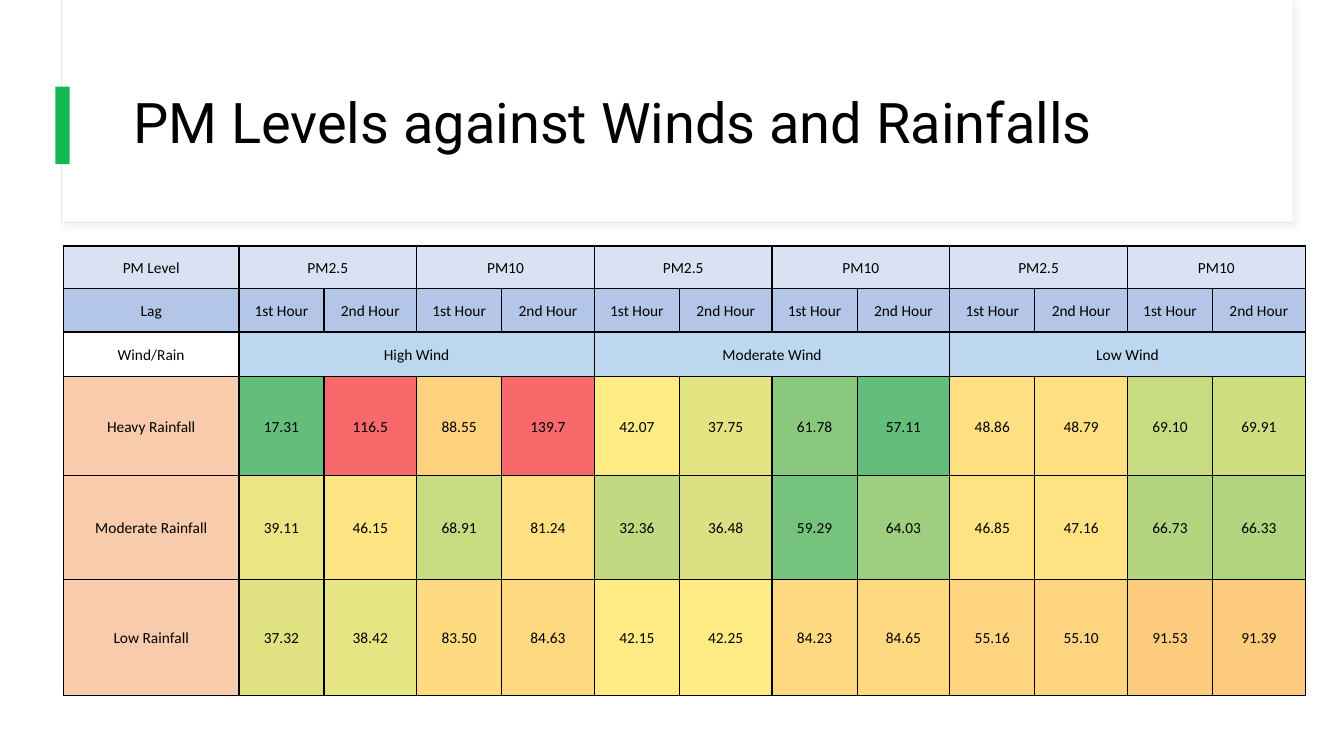
from dataclasses import dataclass
from typing import Optional

from lxml import etree
from pptx import Presentation
from pptx import util as u
from pptx.dml.color import RGBColor
from pptx.enum import shapes, text
from pptx.oxml import ns

# Grid of the slide: one column or row is a hundredth of an inch.
COLUMNS, ROWS = 1333, 750
CELL = u.Inches(0.01)


@dataclass(frozen=True)
class Theme:
    title_font: str = "Roboto"
    table_font: str = "Calibri"
    title_size: float = 40
    table_size: float = 11
    ink: str = "000000"
    panel: str = "FFFFFF"
    panel_line: str = "F0E5E5"
    shadow: str = "D9D9D9"
    accent: str = "16B854"
    pollutant: str = "D9E1F2"
    lag: str = "B4C6E7"
    wind: str = "BDD7EE"
    rain: str = "F8CBAD"
    low: str = "63BE7B"
    middle: str = "FFEB84"
    high: str = "F8696B"


@dataclass(frozen=True)
class Block:
    left: float
    top: float
    width: float
    height: float
    fill: str
    line: Optional[str] = None
    shadowed: bool = False


@dataclass(frozen=True)
class Rainfall:
    label: str
    levels: tuple[str, ...]


THEME = Theme()
HEADER = (
    Block(61, 0, 1221, 221, THEME.panel, THEME.panel_line, True),
    Block(62, 0, 1220, 220, THEME.panel),
    Block(55, 86, 14, 77, THEME.accent),
)
POLLUTANTS = ("PM2.5", "PM10")
LAGS = ("1st Hour", "2nd Hour")
WINDS = ("High Wind", "Moderate Wind", "Low Wind")
RAINFALLS = (
    Rainfall("Heavy Rainfall", ("17.31", "116.5", "88.55", "139.7", "42.07", "37.75",
                                "61.78", "57.11", "48.86", "48.79", "69.10", "69.91")),
    Rainfall("Moderate Rainfall", ("39.11", "46.15", "68.91", "81.24", "32.36", "36.48",
                                   "59.29", "64.03", "46.85", "47.16", "66.73", "66.33")),
    Rainfall("Low Rainfall", ("37.32", "38.42", "83.50", "84.63", "42.15", "42.25",
                              "84.23", "84.65", "55.16", "55.10", "91.53", "91.39")),
)
LABEL_WIDTH = 174
LAG_WIDTHS = (84.4, 91.9)
ROW_HEIGHTS = (42, 43.5, 44, 98.5, 103, 115)


def grid(*counts: float) -> list[int]:
    return [round(count * CELL) for count in counts]


def rgb(colour: str) -> RGBColor:
    return RGBColor.from_string(colour)


def add_child(parent, tag: str, **attributes: str):
    return etree.SubElement(parent, ns.qn(tag), attributes)


def draw_block(slide, block: Block) -> None:
    shape = slide.shapes.add_shape(
        shapes.MSO_SHAPE.RECTANGLE, *grid(block.left, block.top, block.width, block.height))
    shape.shadow.inherit = False
    shape.fill.solid()
    shape.fill.fore_color.rgb = rgb(block.fill)
    if block.line:
        shape.line.color.rgb = rgb(block.line)
        shape.line.width = u.Pt(0.75)
    else:
        shape.line.fill.background()
    if block.shadowed:
        effects = shape._element.spPr.find(ns.qn("a:effectLst"))
        shadow = add_child(effects, "a:outerShdw", blurRad=str(u.Pt(4)),
                           dist=str(u.Pt(3)), dir="2700000")
        colour = add_child(shadow, "a:srgbClr", val=THEME.shadow)
        add_child(colour, "a:alpha", val="30000")


def write_title(slide, wording: str) -> None:
    title = slide.shapes.title
    title.left, title.top, title.width, title.height = grid(122, 60, 1112, 129)
    frame = title.text_frame
    frame.text = wording
    frame.auto_size = text.MSO_AUTO_SIZE.NONE
    frame.vertical_anchor = text.MSO_ANCHOR.MIDDLE
    paragraph = frame.paragraphs[0]
    paragraph.alignment = text.PP_ALIGN.LEFT
    paragraph.line_spacing = 0.9
    paragraph.font.name = THEME.title_font
    paragraph.font.size = u.Pt(THEME.title_size)
    paragraph.font.color.rgb = rgb(THEME.ink)
    slide.shapes._spTree.append(title._element)  # in front of the header panel


def style_cell(cell) -> None:
    """Give a cell its margins, black borders and no fill."""
    cell.margin_left = cell.margin_right = u.Inches(0.07)
    cell.margin_top = cell.margin_bottom = 0
    cell.vertical_anchor = text.MSO_ANCHOR.MIDDLE
    properties = cell._tc.get_or_add_tcPr()
    for side in ("a:lnL", "a:lnR", "a:lnT", "a:lnB"):
        border = add_child(properties, side, w=str(u.Pt(1)))
        add_child(add_child(border, "a:solidFill"), "a:srgbClr", val=THEME.ink)
    cell.fill.background()


def write_cell(table, row: int, column: int, wording: str,
               fill: Optional[str] = None, span: int = 1) -> None:
    cell = table.cell(row, column)
    if span > 1:
        cell.merge(table.cell(row, column + span - 1))
    if fill:
        cell.fill.solid()
        cell.fill.fore_color.rgb = rgb(fill)
    cell.text = wording
    paragraph = cell.text_frame.paragraphs[0]
    paragraph.alignment = text.PP_ALIGN.CENTER
    paragraph.line_spacing = 1.07
    paragraph.font.name = THEME.table_font
    paragraph.font.size = u.Pt(THEME.table_size)
    paragraph.font.color.rgb = rgb(THEME.ink)


def blend(start: str, end: str, share: float) -> str:
    return str(RGBColor(*(round(a + (b - a) * share) for a, b in zip(rgb(start), rgb(end)))))


def pollutant_of(column: int) -> int:
    return column // len(LAGS) % len(POLLUTANTS)


def heat(level: float, levels: list[float]) -> str:
    """Colour a level on the scale from lowest through median to highest."""
    ranked = sorted(levels)
    half = len(ranked) // 2
    median = (ranked[half - 1] + ranked[half]) / 2
    if level < median:
        return blend(THEME.low, THEME.middle, (level - ranked[0]) / (median - ranked[0]))
    return blend(THEME.middle, THEME.high, (level - median) / (ranked[-1] - median))


def draw_levels(slide) -> None:
    pairs = len(WINDS) * len(POLLUTANTS)
    widths = (LABEL_WIDTH, *LAG_WIDTHS * pairs)
    table = slide.shapes.add_table(
        len(ROW_HEIGHTS), len(widths), *grid(63, 244, sum(widths), sum(ROW_HEIGHTS))).table
    table.first_row = table.horz_banding = False
    for column, width in zip(table.columns, grid(*widths)):
        column.width = width
    for row, height in zip(table.rows, grid(*ROW_HEIGHTS)):
        row.height = height
    for cell in table.iter_cells():
        style_cell(cell)

    headings = (
        ("PM Level", THEME.pollutant, POLLUTANTS * len(WINDS), THEME.pollutant),
        ("Lag", THEME.lag, LAGS * pairs, THEME.lag),
        ("Wind/Rain", None, WINDS, THEME.wind),
    )
    for row, (label, label_fill, groups, fill) in enumerate(headings):
        write_cell(table, row, 0, label, label_fill)
        span = (len(widths) - 1) // len(groups)
        for index, group in enumerate(groups):
            write_cell(table, row, 1 + index * span, group, fill, span)

    scales = [[float(level) for rainfall in RAINFALLS
               for column, level in enumerate(rainfall.levels) if pollutant_of(column) == kind]
              for kind in range(len(POLLUTANTS))]
    for row, rainfall in enumerate(RAINFALLS, len(headings)):
        write_cell(table, row, 0, rainfall.label, THEME.rain)
        for column, level in enumerate(rainfall.levels):
            write_cell(table, row, column + 1, level,
                       heat(float(level), scales[pollutant_of(column)]))


def main() -> None:
    deck = Presentation()
    deck.slide_width, deck.slide_height = grid(COLUMNS, ROWS)
    slide = deck.slides.add_slide(deck.slide_layouts.get_by_name("Title Only"))
    for block in HEADER:
        draw_block(slide, block)
    write_title(slide, "PM Levels against Winds and Rainfalls")
    draw_levels(slide)
    deck.save("out.pptx")


if __name__ == "__main__":
    main()
